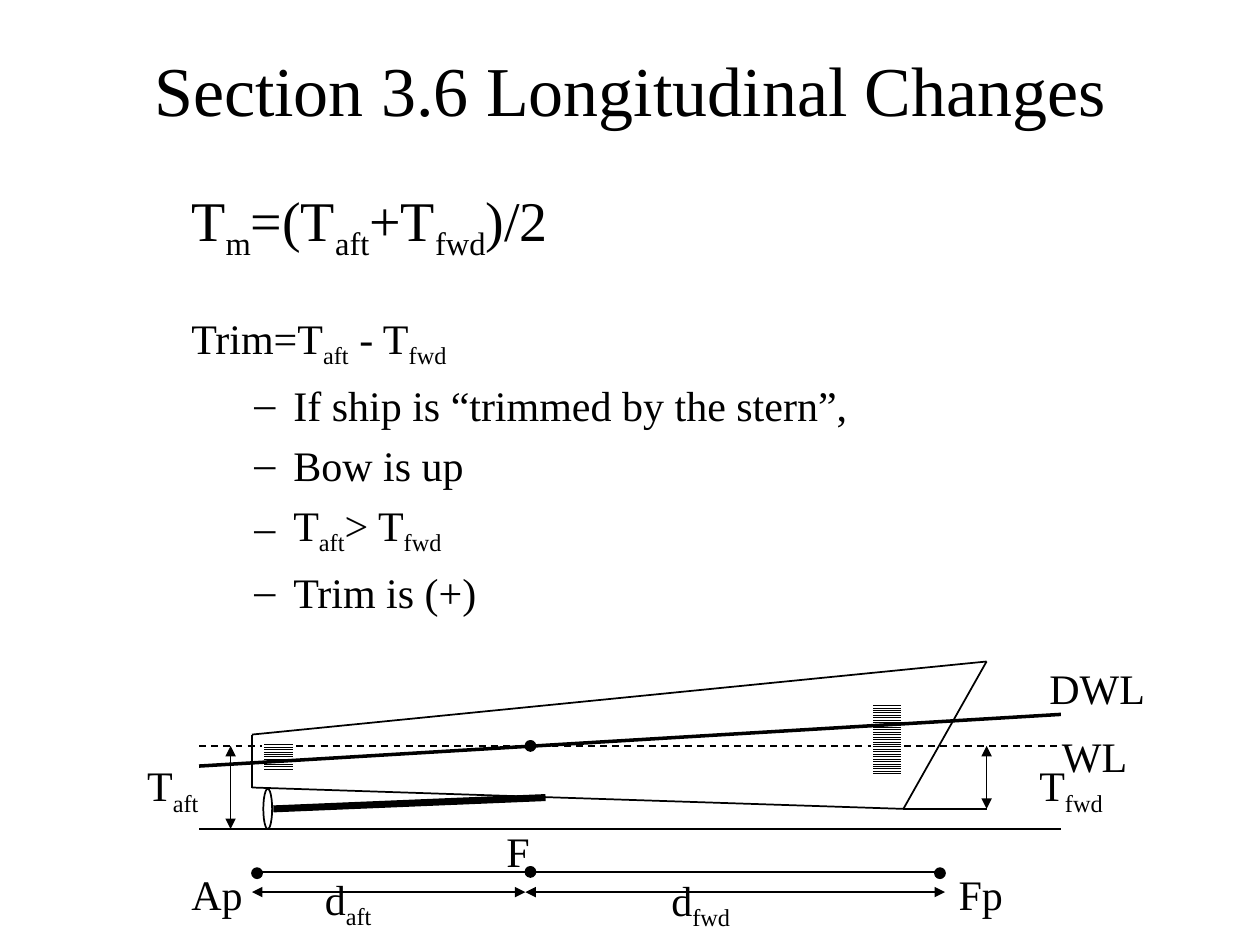
from lxml.etree import SubElement
from pptx import Presentation
from pptx.dml.color import RGBColor
from pptx.enum.dml import MSO_LINE, MSO_PATTERN
from pptx.enum.shapes import MSO_CONNECTOR, MSO_SHAPE
from pptx.enum.text import MSO_ANCHOR, PP_ALIGN
from pptx.oxml.ns import qn
from pptx.util import Inches, Pt

FONT = "Times New Roman"
COLORS = {"ink": "000000", "paper": "FFFFFF"}

# Content: text between bars is subscript
TITLE = "Section 3.6 Longitudinal Changes"
FORMULAS = [  # text, size, space before, bulleted
    ("T|m|=(T|aft|+T|fwd|)/2", 32, 0, False),
    ("Trim=T|aft| - T|fwd|", 24, 29, False),
    ("If ship is “trimmed by the stern”,", 24, 5.5, True),
    ("Bow is up", 24, 5.5, True),
    ("T|aft|> T|fwd|", 24, 5.5, True),
    ("Trim is (+)", 24, 5.5, True),
]
LABELS = [  # text, left, top, width
    ("WL", 8.33, 5.75, 0.72),
    ("T|fwd|", 8.15, 5.98, 0.75),
    ("T|aft|", 1.07, 5.98, 0.64),
    ("DWL", 8.23, 5.21, 0.96),
    ("F", 3.92, 6.5, 0.38),
    ("Fp", 7.51, 6.84, 0.55),
    ("Ap", 1.42, 6.84, 0.61),
    ("d|aft|", 2.48, 6.88, 0.6),
    ("d|fwd|", 5.23, 6.89, 0.71),
]

# Key points of the ship, in inches
WATER_LEFT, WATER_RIGHT, WATERLINE, BASELINE = 1.58, 8.42, 5.92, 6.58
STERN_TOP, STERN_BOTTOM = (2, 5.83), (2, 6.25)
BOW_TOP, BOW_BOTTOM = (7.83, 5.25), (7.17, 6.42)
KEEL_END = (BOW_TOP[0], BOW_BOTTOM[1])
AFT, FLOTATION, FORWARD = 2, 4.17, 7.5
AXIS, DISTANCES = 6.92, 7.08
DOT = 0.08

HULL = [
    (STERN_TOP, STERN_BOTTOM),
    (BOW_TOP, BOW_BOTTOM),
    (STERN_TOP, BOW_TOP),
    (STERN_BOTTOM, BOW_BOTTOM),
]
DRAFT_MARKS = [(6.92, 5.58, 0.24, 0.57), (2.09, 5.89, 0.24, 0.24)]
DIMENSIONS = [
    ((BOW_TOP[0], WATERLINE), KEEL_END),
    ((1.83, WATERLINE), (1.83, BASELINE)),
    ((AFT, DISTANCES), (FLOTATION, DISTANCES)),
    ((FLOTATION, DISTANCES), (FORWARD, DISTANCES)),
]
DOTS = [(FLOTATION, 5.88), (FLOTATION, 6.88), (FORWARD - DOT, 6.89), (AFT, 6.89)]


def color(name):
    return RGBColor.from_string(COLORS[name])


def write(paragraph, text, size=24, align=PP_ALIGN.LEFT, before=0):
    paragraph.alignment = align
    paragraph.space_before = Pt(before)
    for i, part in enumerate(text.split("|")):
        if not part:
            continue
        run = paragraph.add_run()
        run.text = part
        run.font.name = FONT
        run.font.size = Pt(size)
        run.font.color.rgb = color("ink")
        if i % 2:
            run.font._element.set("baseline", "-25000")


def set_indent(paragraph, left, first, bullet=None):
    props = paragraph._p.get_or_add_pPr()
    props.set("marL", str(Inches(left)))
    props.set("indent", str(Inches(first)))
    if bullet:
        SubElement(props, qn("a:buFont"), typeface=FONT)
        SubElement(props, qn("a:buChar"), char=bullet)
    else:
        SubElement(props, qn("a:buNone"))


def add_line(shapes, start, end, width=1, dashed=False, arrows=False):
    line = shapes.add_connector(
        MSO_CONNECTOR.STRAIGHT, *(Inches(v) for v in (*start, *end)))
    line.line.color.rgb = color("ink")
    line.line.width = Pt(width)
    if dashed:
        line.line.dash_style = MSO_LINE.DASH
    if arrows:
        for tag in ("a:headEnd", "a:tailEnd"):
            SubElement(line.line._get_or_add_ln(), qn(tag), type="triangle")
    SubElement(line._element.spPr, qn("a:effectLst"))


def add_part(shapes, kind, box, fill="ink", outline="ink", striped=False):
    part = shapes.add_shape(kind, *(Inches(v) for v in box))
    part.shadow.inherit = False
    if striped:
        part.fill.patterned()
        part.fill.pattern = MSO_PATTERN.LIGHT_HORIZONTAL
        part.fill.back_color.rgb = color("paper")
    else:
        part.fill.solid()
    part.fill.fore_color.rgb = color(fill)
    part.line.color.rgb = color(outline)
    part.line.width = Pt(1)


def main():
    deck = Presentation()
    deck.slide_width, deck.slide_height = Inches(10), Inches(7.5)
    slide = deck.slides.add_slide(deck.slide_layouts[5])
    shapes = slide.shapes

    # Title
    title = shapes.title
    title.left, title.top = Inches(0.75), Inches(0.08)
    title.width, title.height = Inches(8.5), Inches(1.25)
    title.text_frame.vertical_anchor = MSO_ANCHOR.MIDDLE
    write(title.text_frame.paragraphs[0], TITLE, size=40, align=PP_ALIGN.CENTER)

    # Formulas and trim conditions
    formulas = shapes.add_textbox(
        Inches(1.42), Inches(1.42), Inches(8.5), Inches(4.5)).text_frame
    formulas.word_wrap = True
    for i, (text, size, before, bulleted) in enumerate(FORMULAS):
        paragraph = formulas.add_paragraph() if i else formulas.paragraphs[0]
        write(paragraph, text, size=size, before=before)
        if bulleted:
            paragraph.level = 1
            set_indent(paragraph, 0.81, -0.31, bullet="–")
        else:
            set_indent(paragraph, 0.38, -0.38)

    # Waterline, hull and draft marks
    add_line(shapes, (WATER_LEFT, WATERLINE), (WATER_RIGHT, WATERLINE), dashed=True)
    for start, end in HULL:
        add_line(shapes, start, end)
    for box in DRAFT_MARKS:
        add_part(shapes, MSO_SHAPE.RECTANGLE, box, outline="paper", striped=True)

    # Shaft and propeller
    add_line(shapes, (4.33, 6.33), (2.17, 6.42), width=4)
    add_part(shapes, MSO_SHAPE.OVAL, (2.09, 6.26, 0.07, 0.32), fill="paper")

    # Reference lines and dimensions
    add_line(shapes, (WATER_LEFT, BASELINE), (WATER_RIGHT, BASELINE))
    add_line(shapes, BOW_BOTTOM, KEEL_END)
    add_line(shapes, (WATER_LEFT, 6.08), (WATER_RIGHT, 5.67), width=2)
    add_line(shapes, (AFT, AXIS), (FORWARD, AXIS))
    for start, end in DIMENSIONS:
        add_line(shapes, start, end, arrows=True)
    for left, top in DOTS:
        add_part(shapes, MSO_SHAPE.OVAL, (left, top, DOT, DOT))

    # Labels
    for text, left, top, width in LABELS:
        label = shapes.add_textbox(
            Inches(left), Inches(top), Inches(width), Inches(0.5)).text_frame
        label.word_wrap = False
        write(label.paragraphs[0], text)

    deck.save("out.pptx")


if __name__ == "__main__":
    main()
